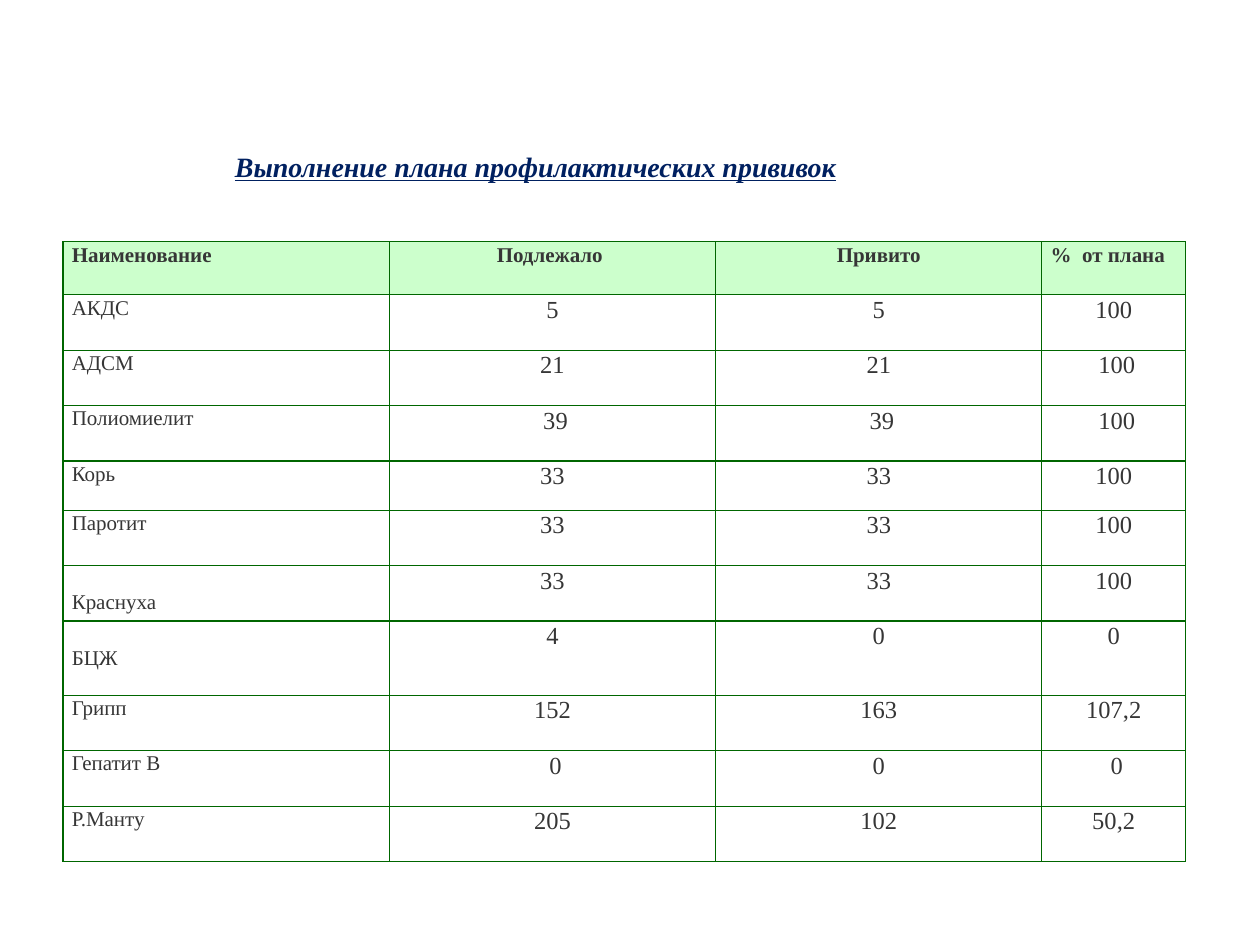
from typing import NamedTuple

from lxml.etree import SubElement as Sub
from pptx import Presentation
from pptx.dml.color import RGBColor as RGB
from pptx.enum.text import MSO_ANCHOR as Anchor, MSO_AUTO_SIZE as Auto, PP_ALIGN as Align
from pptx.oxml.ns import qn
from pptx.util import Inches, Pt

FONT = "Times New Roman"
COLORS = {"title": "002060", "text": "363636", "head": "CCFFCC", "line": "006600"}
HEADS = ("Наименование", "Подлежало ", "Привито", "%  от плана")
WIDTHS = (2.59, 2.59, 2.59, 1.14)
HEAD_TALL = 0.42
LINE = 0.19  # height of one name line


class Row(NamedTuple):
    name: str
    due: str
    done: str
    rate: str
    tall: float = 0.44
    drop: float = 0  # offset of the name from the top


ROWS = (
    Row("АКДС", "5", "5", "100"),
    Row("АДСМ", "21", "21", " 100"),
    Row("Полиомиелит", " 39", " 39", " 100"),
    Row("Корь", "33", "33", "100", tall=0.39),
    Row("Паротит", "33", "33", "100"),
    Row("Краснуха", "33", "33", "100", drop=LINE),
    Row("БЦЖ", "4", "0", "0", tall=0.59, drop=LINE),
    Row("Грипп", "152", "163", "107,2"),
    Row("Гепатит В", " 0", "0", " 0"),
    Row("Р.Манту", "205", "102", "50,2"),
)


def style(para, size: int, color: str, align: Align, bold: bool = False) -> None:
    para.alignment = align
    para.line_spacing = 1.07
    font = para.font
    font.name, font.size, font.bold = FONT, Pt(size), bold
    font.color.rgb = RGB.from_string(COLORS[color])


def frame(cell) -> None:
    """Draw the four borders of a cell."""
    props = cell._tc.get_or_add_tcPr()
    for side in ("lnL", "lnR", "lnT", "lnB"):
        line = Sub(props, qn(f"a:{side}"), w=str(Pt(0.75)))
        fill = Sub(line, qn("a:solidFill"))
        Sub(fill, qn("a:srgbClr"), val=COLORS["line"])


def fill_cell(cell, text: str, size: int, align: Align,
              head: bool = False, drop: float = 0) -> None:
    frame(cell)
    if head:
        cell.fill.solid()
        cell.fill.fore_color.rgb = RGB.from_string(COLORS["head"])
    else:
        cell.fill.background()
    cell.margin_left = cell.margin_right = Inches(0.07)
    cell.margin_top, cell.margin_bottom = Inches(drop), 0
    cell.text = text
    style(cell.text_frame.paragraphs[0], size, "text", align, head)


def add_title(slide) -> None:
    title = slide.shapes.title
    title.left, title.top = Inches(0), Inches(1.08)
    title.width, title.height = Inches(8), Inches(0.46)
    box = title.text_frame
    box.text = "Выполнение плана профилактических прививок"
    box.auto_size, box.vertical_anchor = Auto.NONE, Anchor.MIDDLE
    para = box.paragraphs[0]
    style(para, 16, "title", Align.CENTER, True)
    para.font.italic = para.font.underline = True
    para.space_after = Pt(8)
    props = para._p.get_or_add_pPr()
    props.set("marL", str(Inches(0.5)))
    props.set("indent", "0")


def add_grid(slide) -> None:
    talls = (HEAD_TALL, *(row.tall for row in ROWS))
    grid = slide.shapes.add_table(
        len(talls), len(WIDTHS), Inches(0.5), Inches(1.92),
        Inches(sum(WIDTHS)), Inches(sum(talls))).table
    for col, wide in zip(grid.columns, WIDTHS):
        col.width = Inches(wide)
    for line, tall in zip(grid.rows, talls):
        line.height = Inches(tall)

    # Header row
    last = len(HEADS) - 1
    for col, text in enumerate(HEADS):
        align = Align.LEFT if col in (0, last) else Align.CENTER
        fill_cell(grid.cell(0, col), text, 12, align, head=True)

    # Vaccine rows
    for num, row in enumerate(ROWS, 1):
        fill_cell(grid.cell(num, 0), row.name, 12, Align.LEFT, drop=row.drop)
        for col, text in enumerate((row.due, row.done, row.rate), 1):
            fill_cell(grid.cell(num, col), text, 14, Align.CENTER)


def main() -> None:
    deck = Presentation()
    deck.slide_width, deck.slide_height = Inches(10), Inches(7.5)
    slide = deck.slides.add_slide(deck.slide_layouts[5])
    add_title(slide)
    add_grid(slide)
    deck.save("out.pptx")


if __name__ == "__main__":
    main()
